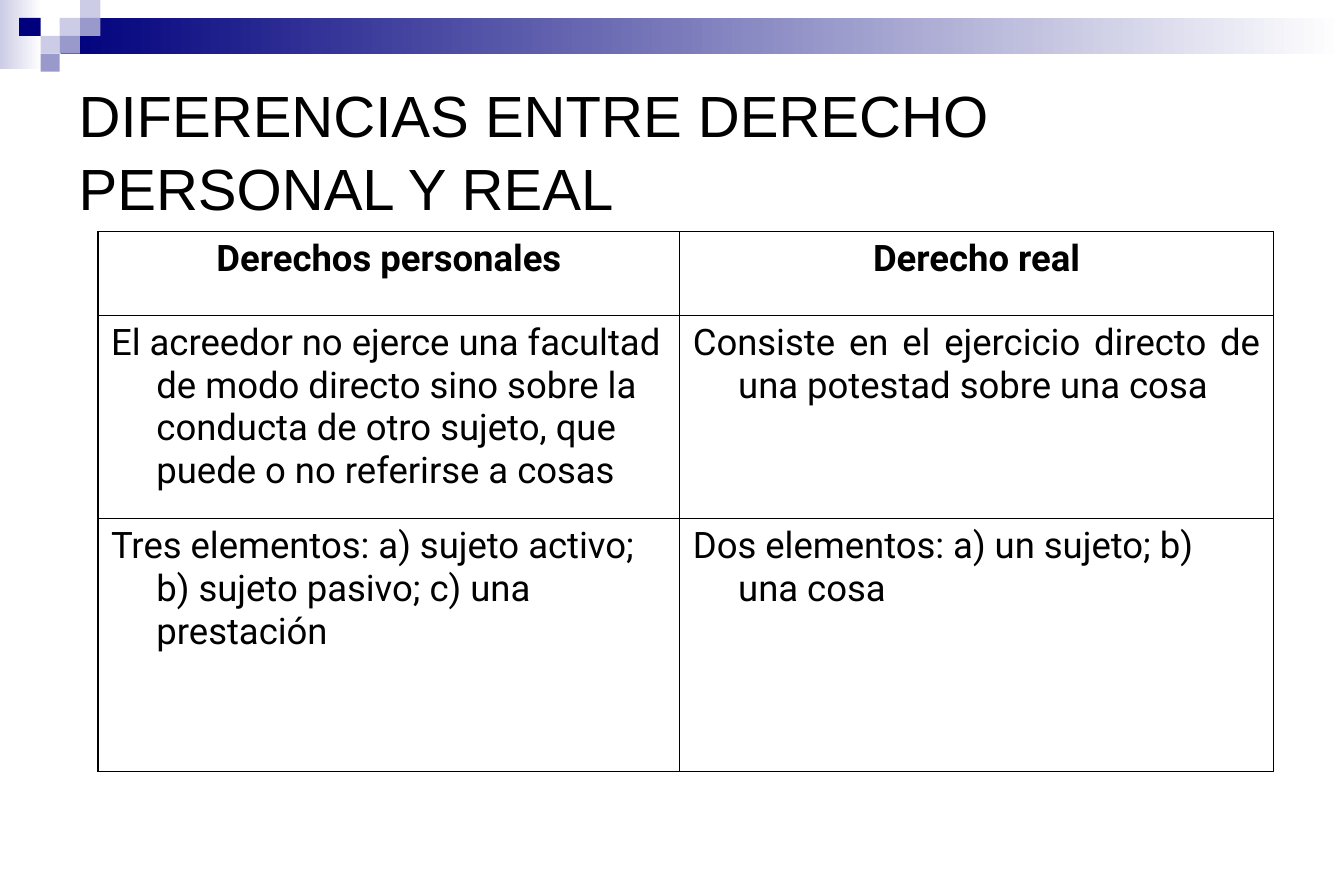
import pptx
import pptx.util
import pptx.dml.color
import pptx.enum.shapes
import pptx.enum.text
import pptx.oxml
import pptx.oxml.ns

RGBColor = pptx.dml.color.RGBColor
ALIGN = pptx.enum.text.PP_ALIGN

NAVY = RGBColor(0x00, 0x00, 0x7D)
LILAC = RGBColor(0x99, 0x99, 0xCC)
PALE = RGBColor(0xCC, 0xCC, 0xE6)
WHITE = RGBColor(0xFF, 0xFF, 0xFF)
BLACK = RGBColor(0x00, 0x00, 0x00)

PX = 9144  # 100 px to the inch


class SlideBuilder:
    title_format = {"name": "Arial", "size": pptx.util.Pt(35), "bold": False}
    body_format = {"name": "Roboto", "size": pptx.util.Pt(22), "bold": False}
    header_format = {**body_format, "bold": True}
    hanging = 38
    cell_margins = {"margin_left": 11, "margin_right": 11,
                    "margin_top": 5, "margin_bottom": 5}

    def __init__(self, slide):
        self.slide = slide

    def box(self, left, top, width, height):
        return [length * PX for length in (left, top, width, height)]

    def rectangle(self, *place, color, fade_to=None):
        shape = self.slide.shapes.add_shape(
            pptx.enum.shapes.MSO_SHAPE.RECTANGLE, *self.box(*place))
        shape.shadow.inherit = False
        shape.line.fill.background()
        if fade_to is None:
            shape.fill.solid()
            shape.fill.fore_color.rgb = color
        else:
            shape.fill.gradient()
            shape.fill.gradient_angle = 0
            for stop, stop_color, position in zip(
                    shape.fill.gradient_stops, (color, fade_to), (0, 1)):
                stop.color.rgb = stop_color
                stop.position = position

    def add_text(self, paragraph, text, text_format):
        run = paragraph.add_run()
        run.text = text
        run.font.color.rgb = BLACK
        for name, value in text_format.items():
            setattr(run.font, name, value)

    def title(self, *place, text):
        shape = self.slide.shapes.add_textbox(*self.box(*place))
        frame = shape.text_frame
        frame.word_wrap = True
        frame.vertical_anchor = pptx.enum.text.MSO_ANCHOR.MIDDLE
        paragraph = frame.paragraphs[0]
        paragraph.line_spacing = 1.05
        self.add_text(paragraph, text, self.title_format)

    def borders(self, cell):
        properties = cell._tc.get_or_add_tcPr()
        for index, side in enumerate(("lnL", "lnR", "lnT", "lnB")):
            properties.insert(index, pptx.oxml.parse_xml(
                f'<a:{side} {pptx.oxml.ns.nsdecls("a")} w="{pptx.util.Pt(1)}">'
                f'<a:solidFill><a:srgbClr val="{BLACK}"/></a:solidFill></a:{side}>'))

    def fill_cell(self, cell, text, alignment, text_format):
        cell.fill.background()
        for name, value in self.cell_margins.items():
            setattr(cell, name, value * PX)
        self.borders(cell)
        paragraph = cell.text_frame.paragraphs[0]
        paragraph.alignment = alignment
        properties = paragraph._p.get_or_add_pPr()
        properties.set("marL", str(self.hanging * PX))
        properties.set("indent", str(-self.hanging * PX))
        self.add_text(paragraph, text, text_format)

    def table(self, left, top, widths, heights, rows):
        place = self.box(left, top, sum(widths), sum(heights))
        table = self.slide.shapes.add_table(len(heights), len(widths), *place).table
        table.horz_banding = False
        table.first_row = False
        for column, width in zip(table.columns, widths):
            column.width = width * PX
        for row, height in zip(table.rows, heights):
            row.height = height * PX
        for row_index, row in enumerate(rows):
            text_format = self.body_format if row_index else self.header_format
            for column_index, (text, alignment) in enumerate(row):
                self.fill_cell(table.cell(row_index, column_index),
                               text, alignment, text_format)


def main():
    presentation = pptx.Presentation()
    presentation.slide_width = 1125 * PX
    presentation.slide_height = 750 * PX
    builder = SlideBuilder(presentation.slides.add_slide(presentation.slide_layouts[6]))

    # Fading bands along the top
    builder.rectangle(0, 0, 35, 58, color=PALE, fade_to=WHITE)
    builder.rectangle(51, 15, 1074, 30, color=NAVY, fade_to=WHITE)

    # Mosaic of small squares, by column and row
    edges = (16, 34, 50, 67, 84)
    step = 15
    for column, row, color in (
            (2, 1, PALE), (3, 0, PALE), (3, 1, LILAC), (1, 2, PALE),
            (0, 1, NAVY), (2, 2, LILAC), (1, 3, LILAC)):
        builder.rectangle(edges[column], row * step,
                          edges[column + 1] - edges[column], step, color=color)

    # Title
    builder.title(56, 50, 1012, 150, text="DIFERENCIAS ENTRE DERECHO PERSONAL Y REAL")

    # Comparison table
    builder.table(82, 194, (487, 497), (70, 170, 212), (
        (("Derechos personales", ALIGN.CENTER), ("Derecho real", ALIGN.CENTER)),
        (("El acreedor no ejerce una facultad de modo directo sino sobre la "
          "conducta de otro sujeto, que puede o no referirse a cosas", ALIGN.LEFT),
         ("Consiste en el ejercicio directo de una potestad sobre una cosa",
          ALIGN.JUSTIFY)),
        (("Tres elementos: a) sujeto activo; b) sujeto pasivo; c) una prestación",
          ALIGN.LEFT),
         ("Dos elementos: a) un sujeto; b) una cosa", ALIGN.LEFT)),
    ))

    presentation.save("out.pptx")


if __name__ == "__main__":
    main()
